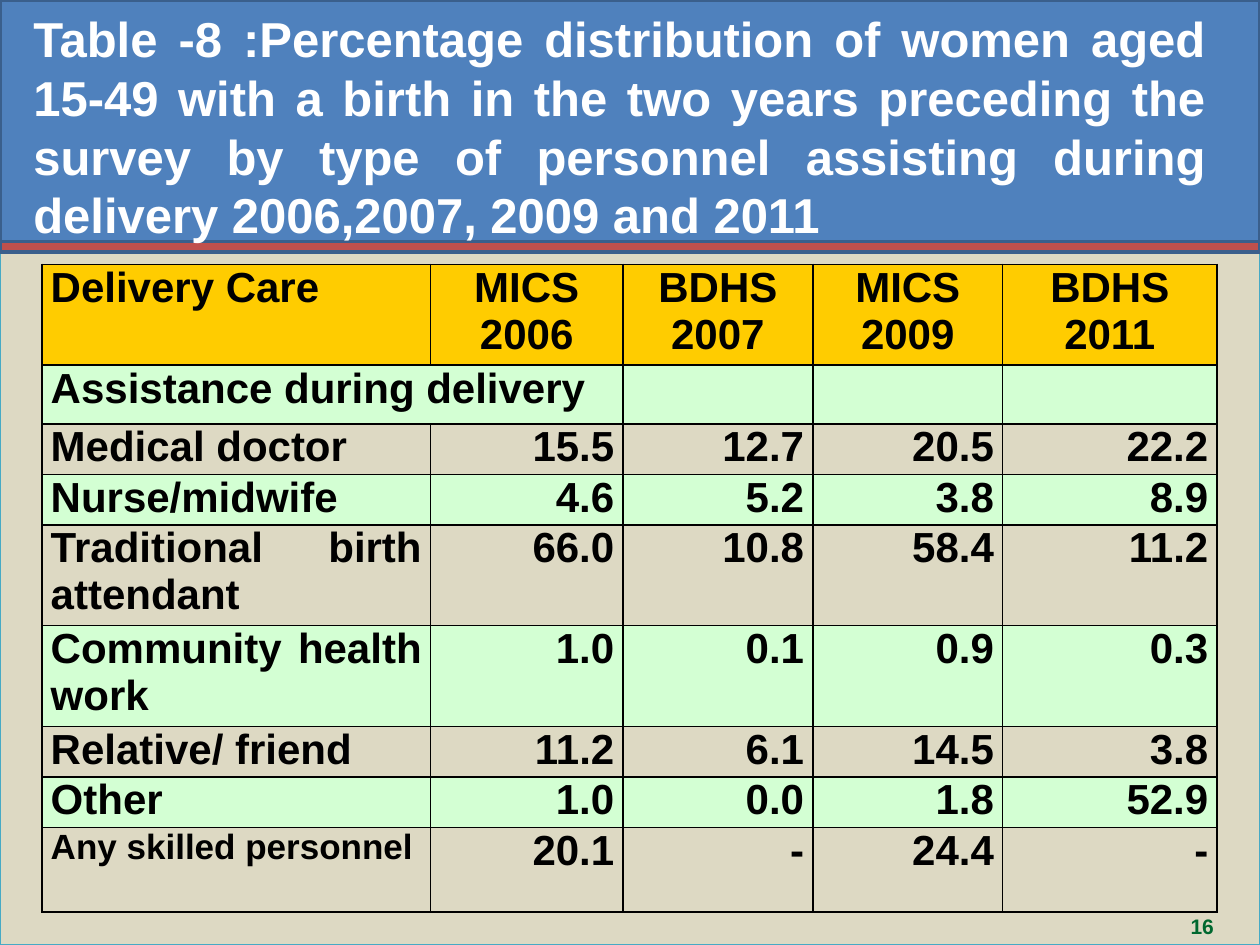
from lxml import etree
from pptx import Presentation
from pptx.dml.color import RGBColor
from pptx.enum import shapes, text
from pptx.oxml import ns
from pptx.util import Pt

COLORS = {
    "band": "4F81BD", "band_line": "3A5F8C", "stripe": "C0504D",
    "body": "DDD9C3", "body_line": "46AAC5", "header": "FFCC00",
    "mint": "D3FFD3", "black": "000000", "white": "FFFFFF", "number": "00682F",
}
ALIGN = text.PP_ALIGN
COLUMNS = [222, 110, 108.5, 108.5, 122.5]
TALL, SHORT = 56.6, 28.3
HEIGHTS = [TALL, 33.6, SHORT, SHORT, TALL, TALL, SHORT, SHORT, 48.4]
ROWS = [
    ["Delivery Care", "MICS 2006", "BDHS 2007", "MICS 2009", "BDHS 2011"],
    ["Assistance during delivery", "", "", "", ""],
    ["Medical doctor", "15.5", "12.7", "20.5", "22.2"],
    ["Nurse/midwife", "4.6", "5.2", "3.8", "8.9"],
    ["Traditional birth attendant", "66.0", "10.8", "58.4", "11.2"],
    ["Community health work", "1.0", "0.1", "0.9", "0.3"],
    ["Relative/ friend", "11.2", "6.1", "14.5", "3.8"],
    ["Other", "1.0", "0.0", "1.8", "52.9"],
    ["Any skilled personnel", "20.1", "-", "24.4", "-"],
]
TITLE = ("Table -8 :Percentage distribution of women aged 15-49 with a birth in the "
         "two years preceding the survey by type of personnel assisting during "
         "delivery 2006,2007, 2009 and 2011")


def rgb(name):
    return RGBColor.from_string(COLORS[name])


def write(tf, words, size, color, align):
    p = tf.paragraphs[0]
    p.alignment = align
    r = p.add_run()
    r.text = words
    for name, value in {"name": "Arial", "size": Pt(size), "bold": True}.items():
        setattr(r.font, name, value)
    r.font.color.rgb = rgb(color)


def add_panel(s, box, fill, line, width):
    sp = s.shapes.add_shape(shapes.MSO_SHAPE.RECTANGLE, *map(Pt, box))
    sp.shadow.inherit = False
    sp.fill.solid()
    sp.fill.fore_color.rgb = rgb(fill)
    sp.line.color.rgb = rgb(line)
    sp.line.width = Pt(width)


def add_label(s, box, words, size, color, align, anchor):
    tf = s.shapes.add_textbox(*map(Pt, box)).text_frame
    tf.word_wrap = True
    tf.vertical_anchor = anchor
    write(tf, words, size, color, align)


def add_heading(s, box):
    left, top, width, height = box
    stripe = 6
    band = height - stripe
    add_panel(s, (left, top, width, band), "band", "band_line", 2)
    add_panel(s, (left, top + band, width, stripe), "stripe", "band_line", 2)
    add_label(s, (left + 12, top + 12, width - 36, band - 18), TITLE, 28, "white",
              ALIGN.JUSTIFY, text.MSO_ANCHOR.MIDDLE)


def add_borders(cell):
    tc_pr = cell._tc.get_or_add_tcPr()
    for i, side in enumerate(("a:lnL", "a:lnR", "a:lnT", "a:lnB")):
        ln = etree.Element(ns.qn(side), w=str(Pt(1)))
        fill = etree.SubElement(ln, ns.qn("a:solidFill"))
        etree.SubElement(fill, ns.qn("a:srgbClr"), val=COLORS["black"])
        tc_pr.insert(i, ln)


def format_cell(cell, row, column, words):
    margins = {"margin_left": 5, "margin_right": 5, "margin_top": 0, "margin_bottom": 0}
    for name, value in margins.items():
        setattr(cell, name, Pt(value))
    if row == 0 or row % 2:
        cell.fill.solid()
        cell.fill.fore_color.rgb = rgb("mint" if row else "header")
    else:
        cell.fill.background()
    add_borders(cell)
    if words:
        align = ALIGN.JUSTIFY if column == 0 else ALIGN.RIGHT if row else ALIGN.CENTER
        size = 20 if column == 0 and row == len(ROWS) - 1 else 24
        write(cell.text_frame, words, size, "black", align)


def add_care_table(s, left, top):
    box = (left, top, sum(COLUMNS), sum(HEIGHTS))
    table = s.shapes.add_table(len(ROWS), len(COLUMNS), *map(Pt, box)).table
    table.first_row = table.horz_banding = False
    for column, width in zip(table.columns, COLUMNS):
        column.width = Pt(width)
    for i, (row, height) in enumerate(zip(table.rows, HEIGHTS)):
        row.height = Pt(height)
        for j, words in enumerate(ROWS[i]):
            format_cell(table.cell(i, j), i, j, words)
    table.cell(1, 0).merge(table.cell(1, 1))


def main():
    prs = Presentation()
    prs.slide_width, prs.slide_height = Pt(720), Pt(540)
    s = prs.slides.add_slide(prs.slide_layouts[6])
    add_panel(s, (0, 144, 720, 396), "body", "body_line", 0.75)
    add_heading(s, (0, 0, 720, 144))
    add_care_table(s, 24, 151)
    add_label(s, (666, 518.4, 42, 21.6), "16", 12, "number",
              ALIGN.CENTER, text.MSO_ANCHOR.TOP)
    prs.save("out.pptx")


if __name__ == "__main__":
    main()
